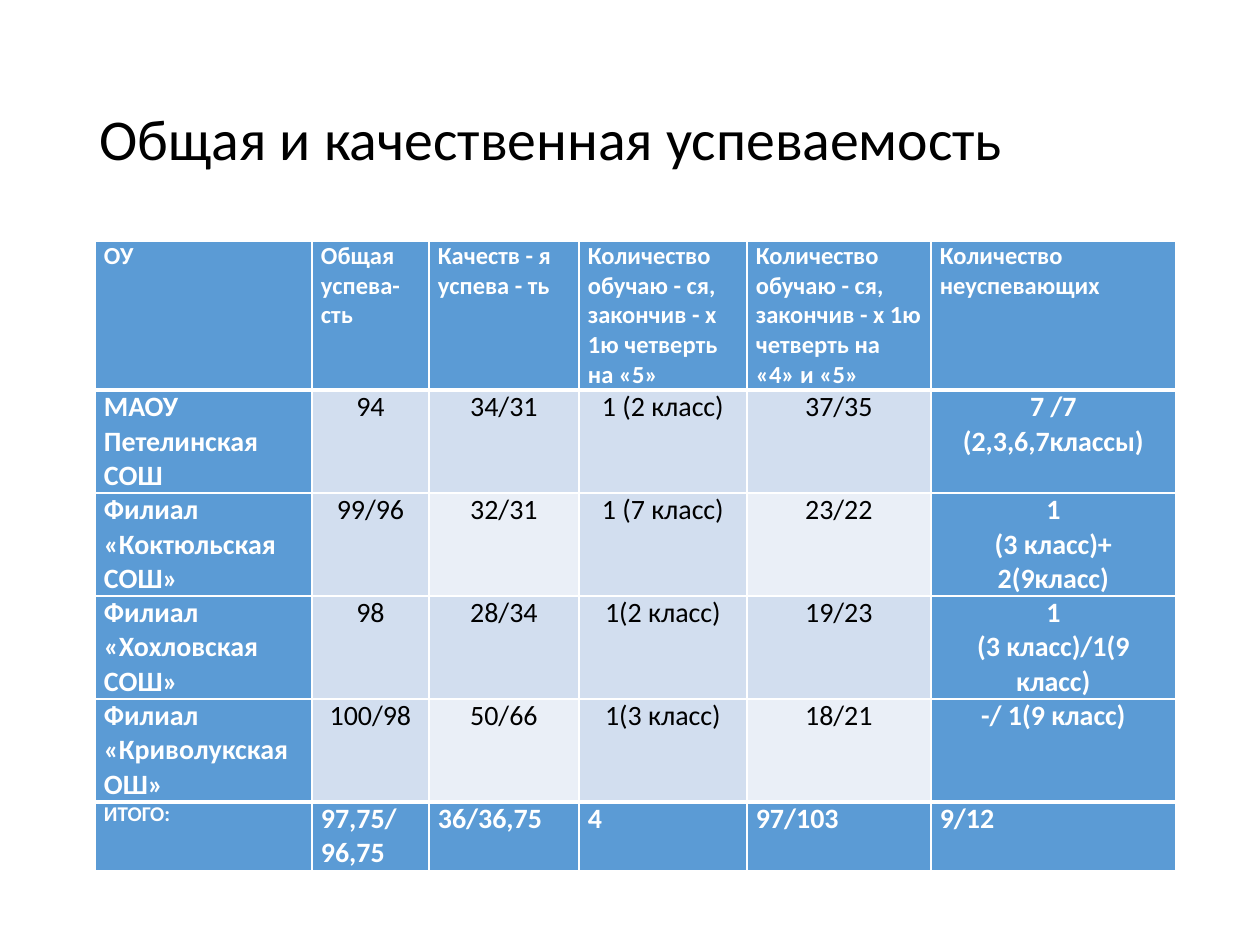
from dataclasses import dataclass

from pptx import Presentation
from pptx.dml.color import RGBColor as RGB
from pptx.enum.text import MSO_ANCHOR as ANCHOR, MSO_AUTO_SIZE as AUTO, PP_ALIGN as ALIGN
from pptx.oxml.ns import qn
from pptx.util import Pt
from lxml.etree import SubElement


@dataclass(frozen=True)
class Theme:
    font: str = "Calibri"
    accent: str = "5B9BD5"
    band_dark: str = "D2DEEF"
    band_light: str = "EAEFF7"
    white: str = "FFFFFF"
    black: str = "000000"
    title: int = 33
    header: int = 14
    body: int = 16
    total: int = 12
    thin: int = 1
    thick: int = 3


THEME = Theme()
COLS = [217, 117, 150, 168, 184, 245]
HEIGHTS = [148, 103, 103, 103, 103, 67]
ROWS = [
    ["ОУ", "Общая успева-сть", "Качеств - я успева - ть",
     "Количество обучаю - ся, закончив - х 1ю четверть на «5»",
     "Количество обучаю - ся, закончив - х 1ю четверть на «4» и «5»",
     "Количество неуспевающих"],
    ["МАОУ Петелинская СОШ", "94", "34/31", "1 (2 класс)", "37/35",
     "7 /7\n(2,3,6,7классы)"],
    ["Филиал «Коктюльская СОШ»", "99/96", "32/31", "1 (7 класс)", "23/22",
     "1\n(3 класс)+ 2(9класс)"],
    ["Филиал «Хохловская СОШ»", "98", "28/34", "1(2 класс)", "19/23",
     "1\n(3 класс)/1(9 класс)"],
    ["Филиал «Криволукская ОШ»", "100/98", "50/66", "1(3 класс)", "18/21",
     "-/ 1(9 класс)"],
    ["ИТОГО:", "97,75/\n96,75", "36/36,75", "4", "97/103", "9/12"],
]


def px(n):
    return n * 914400 // 126


def style_font(font, size, color, bold=False):
    font.name = THEME.font
    font.size = Pt(size)
    font.bold = bold
    font.color.rgb = RGB.from_string(color)


def add_title(s, box, text):
    sp = s.shapes.title
    sp.left, sp.top, sp.width, sp.height = map(px, box)
    tf = sp.text_frame
    tf.text = text
    tf.auto_size = AUTO.NONE
    tf.word_wrap = True
    tf.vertical_anchor = ANCHOR.MIDDLE
    p = tf.paragraphs[0]
    p.alignment = ALIGN.LEFT
    p.line_spacing = 0.9
    style_font(p.font, THEME.title, THEME.black)


def set_borders(cell, top, bottom):
    tcPr = cell._tc.get_or_add_tcPr()
    widths = {"lnL": THEME.thin, "lnR": THEME.thin, "lnT": top, "lnB": bottom}
    for tag, width in widths.items():
        ln = SubElement(tcPr, qn(f"a:{tag}"), w=str(Pt(width)))
        fill = SubElement(ln, qn("a:solidFill"))
        SubElement(fill, qn("a:srgbClr"), val=THEME.white)


def cell_size(i, j, last):
    if i == 0:
        return THEME.header
    return THEME.total if i == last and j == 0 else THEME.body


def cell_fill(i, j, strong):
    if strong:
        return THEME.accent
    return THEME.band_dark if i % 2 or j % 2 else THEME.band_light


def format_cell(cell, text, i, j, last_row, last_col):
    edge_row = i in (0, last_row)
    strong = edge_row or j in (0, last_col)
    cell.margin_left = cell.margin_right = px(9)
    cell.margin_top = cell.margin_bottom = 0
    cell.text = text
    for p in cell.text_frame.paragraphs:
        p.alignment = ALIGN.LEFT if edge_row or j == 0 else ALIGN.CENTER
        style_font(p.font, cell_size(i, j, last_row),
                   THEME.white if strong else THEME.black, strong)
    set_borders(cell,
                THEME.thick if i in (1, last_row) else THEME.thin,
                THEME.thick if i in (0, last_row - 1) else THEME.thin)
    cell.fill.solid()
    cell.fill.fore_color.rgb = RGB.from_string(cell_fill(i, j, strong))


def add_results(s, box):
    table = s.shapes.add_table(len(ROWS), len(COLS), *map(px, box)).table
    for column, width in zip(table.columns, COLS):
        column.width = px(width)
    for row, height in zip(table.rows, HEIGHTS):
        row.height = px(height)
    for i, texts in enumerate(ROWS):
        for j, text in enumerate(texts):
            format_cell(table.cell(i, j), text, i, j, len(ROWS) - 1, len(COLS) - 1)


def main():
    prs = Presentation()
    prs.slide_width, prs.slide_height = px(1260), px(945)
    s = prs.slides.add_slide(prs.slide_layouts[5])
    add_title(s, (87, 50, 1086, 183), "Общая и качественная успеваемость")
    add_results(s, (95, 241, sum(COLS), sum(HEIGHTS)))
    prs.save("out.pptx")


if __name__ == "__main__":
    main()
